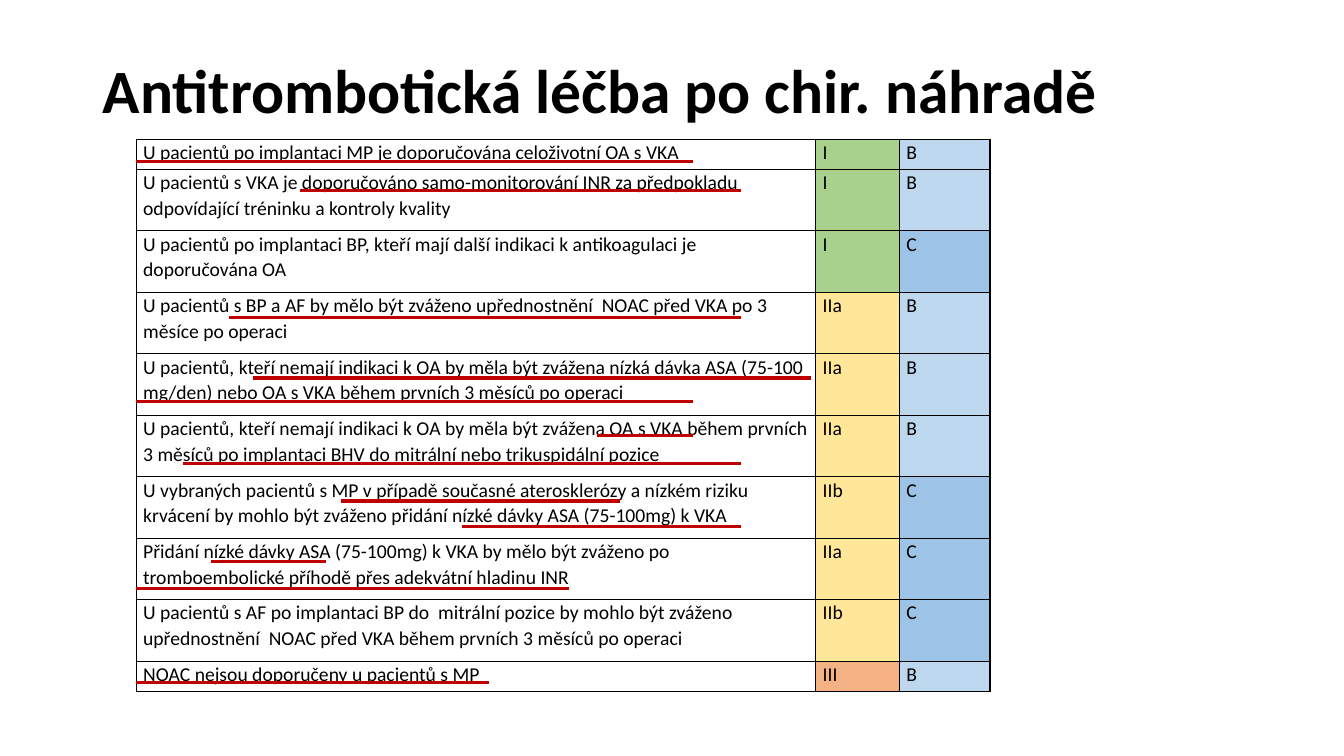
from dataclasses import dataclass

from lxml.etree import SubElement
from pptx import Presentation
from pptx.dml.color import RGBColor
from pptx.enum.shapes import MSO_CONNECTOR
from pptx.enum.text import MSO_ANCHOR, MSO_AUTO_SIZE, PP_ALIGN
from pptx.oxml.ns import qn
from pptx.util import Inches, Pt


@dataclass(frozen=True)
class Theme:
    font: str = "Calibri"
    ink: str = "000000"
    underline: str = "C00000"
    title_size: float = 44
    table_size: float = 14
    border_width: float = 1
    underline_width: float = 2.25


THEME = Theme()
CLASS_FILLS = {"I": "A9D18E", "IIa": "FFE699", "IIb": "FFE699", "III": "F4B183"}
LEVEL_FILLS = {"B": "BDD7EE", "C": "9DC3E6"}

TABLE_LEFT, TABLE_TOP = 1.35, 1.38
COLUMN_WIDTHS = (6.74, 0.83, 0.9)
ONE_LINE_ROW, TWO_LINE_ROW = 0.3, 0.61

# Recommendation, class, level of evidence
RECOMMENDATIONS = [
    ("U pacientů po implantaci MP je doporučována celoživotní OA s VKA", "I", "B"),
    ("U pacientů s VKA je doporučováno samo-monitorování INR za předpokladu "
     "odpovídající tréninku a kontroly kvality", "I", "B"),
    ("U pacientů po implantaci BP, kteří mají další indikaci k antikoagulaci je "
     "doporučována OA", "I", "C"),
    ("U pacientů s BP a AF by mělo být zváženo upřednostnění  NOAC před VKA po 3 "
     "měsíce po operaci", "IIa", "B"),
    ("U pacientů, kteří nemají indikaci k OA by měla být zvážena nízká dávka ASA "
     "(75-100 mg/den) nebo OA s VKA během prvních 3 měsíců po operaci", "IIa", "B"),
    ("U pacientů, kteří nemají indikaci k OA by měla být zvážena OA s VKA během "
     "prvních 3 měsíců po implantaci BHV do mitrální nebo trikuspidální pozice",
     "IIa", "B"),
    ("U vybraných pacientů s MP v případě současné aterosklerózy a nízkém riziku "
     "krvácení by mohlo být zváženo přidání nízké dávky ASA (75-100mg) k VKA",
     "IIb", "C"),
    ("Přidání nízké dávky ASA (75-100mg) k VKA by mělo být zváženo po "
     "tromboembolické příhodě přes adekvátní hladinu INR", "IIa", "C"),
    ("U pacientů s AF po implantaci BP do  mitrální pozice by mohlo být zváženo "
     "upřednostnění  NOAC před VKA během prvních 3 měsíců po operaci", "IIb", "C"),
    ("NOAC nejsou doporučeny u pacientů s MP", "III", "B"),
]

# Start, end and height of each red underline
UNDERLINES = [
    (TABLE_LEFT, 6.87, 1.6), (TABLE_LEFT, 4.85, 6.77), (2.98, 7.35, 1.89),
    (2.27, 7.35, 3.15), (2.51, 8.04, 3.75), (TABLE_LEFT, 6.87, 3.98),
    (1.82, 7.35, 4.6), (5.92, 6.87, 4.32), (3.38, 6.15, 4.97),
    (4.58, 7.35, 5.22), (2.09, 3.23, 5.57), (TABLE_LEFT, 5.64, 5.84),
]


def write_text(frame, text, *, size, bold=False, line_spacing=1.0):
    frame.word_wrap = True
    paragraph = frame.paragraphs[0]
    paragraph.alignment = PP_ALIGN.LEFT
    paragraph.line_spacing = line_spacing
    run = paragraph.add_run()
    run.text = text
    run.font.name = THEME.font
    run.font.size = Pt(size)
    run.font.bold = bold
    run.font.color.rgb = RGBColor.from_string(THEME.ink)


def add_title(slide, text):
    title = slide.shapes.title
    title.left, title.top = Inches(0.92), Inches(0.2)
    title.width, title.height = Inches(11.5), Inches(1.45)
    title.text_frame.auto_size = MSO_AUTO_SIZE.NONE
    title.text_frame.vertical_anchor = MSO_ANCHOR.MIDDLE
    write_text(title.text_frame, text, size=THEME.title_size, bold=True,
               line_spacing=0.9)


def add_borders(cell):
    properties = cell._tc.get_or_add_tcPr()
    for side in ("a:lnL", "a:lnR", "a:lnT", "a:lnB"):
        border = SubElement(properties, qn(side), w=str(Pt(THEME.border_width)))
        fill = SubElement(border, qn("a:solidFill"))
        SubElement(fill, qn("a:srgbClr"), val=THEME.ink)


def format_cell(cell, text, fill=None):
    cell.margin_left = cell.margin_right = Inches(0.07)
    cell.margin_top = cell.margin_bottom = Inches(0)
    add_borders(cell)
    if fill:
        cell.fill.solid()
        cell.fill.fore_color.rgb = RGBColor.from_string(fill)
    else:
        cell.fill.background()
    write_text(cell.text_frame, text, size=THEME.table_size, line_spacing=1.07)


def add_recommendations(slide):
    last = len(RECOMMENDATIONS) - 1
    heights = [ONE_LINE_ROW if index in (0, last) else TWO_LINE_ROW
               for index in range(len(RECOMMENDATIONS))]
    table = slide.shapes.add_table(
        len(heights), len(COLUMN_WIDTHS), Inches(TABLE_LEFT), Inches(TABLE_TOP),
        Inches(sum(COLUMN_WIDTHS)), Inches(sum(heights))).table
    table.first_row = table.horz_banding = False
    for column, width in zip(table.columns, COLUMN_WIDTHS):
        column.width = Inches(width)
    for row, height, (advice, grade, level) in zip(table.rows, heights,
                                                   RECOMMENDATIONS):
        row.height = Inches(height)
        advice_cell, grade_cell, level_cell = row.cells
        format_cell(advice_cell, advice)
        format_cell(grade_cell, grade, CLASS_FILLS[grade])
        format_cell(level_cell, level, LEVEL_FILLS[level])


def add_underline(slide, start, end, height):
    underline = slide.shapes.add_connector(
        MSO_CONNECTOR.STRAIGHT, Inches(start), Inches(height),
        Inches(end), Inches(height))
    underline.line.color.rgb = RGBColor.from_string(THEME.underline)
    underline.line.width = Pt(THEME.underline_width)
    SubElement(underline._element.spPr, qn("a:effectLst"))


def main():
    presentation = Presentation()
    presentation.slide_width = Inches(13.33)
    presentation.slide_height = Inches(7.5)
    title_only = presentation.slide_layouts[5]
    slide = presentation.slides.add_slide(title_only)

    # Heading
    add_title(slide, "Antitrombotická léčba po chir. náhradě")

    # Table of recommendations
    add_recommendations(slide)

    # Emphasis under key phrases
    for start, end, height in UNDERLINES:
        add_underline(slide, start, end, height)

    presentation.save("out.pptx")


if __name__ == "__main__":
    main()
